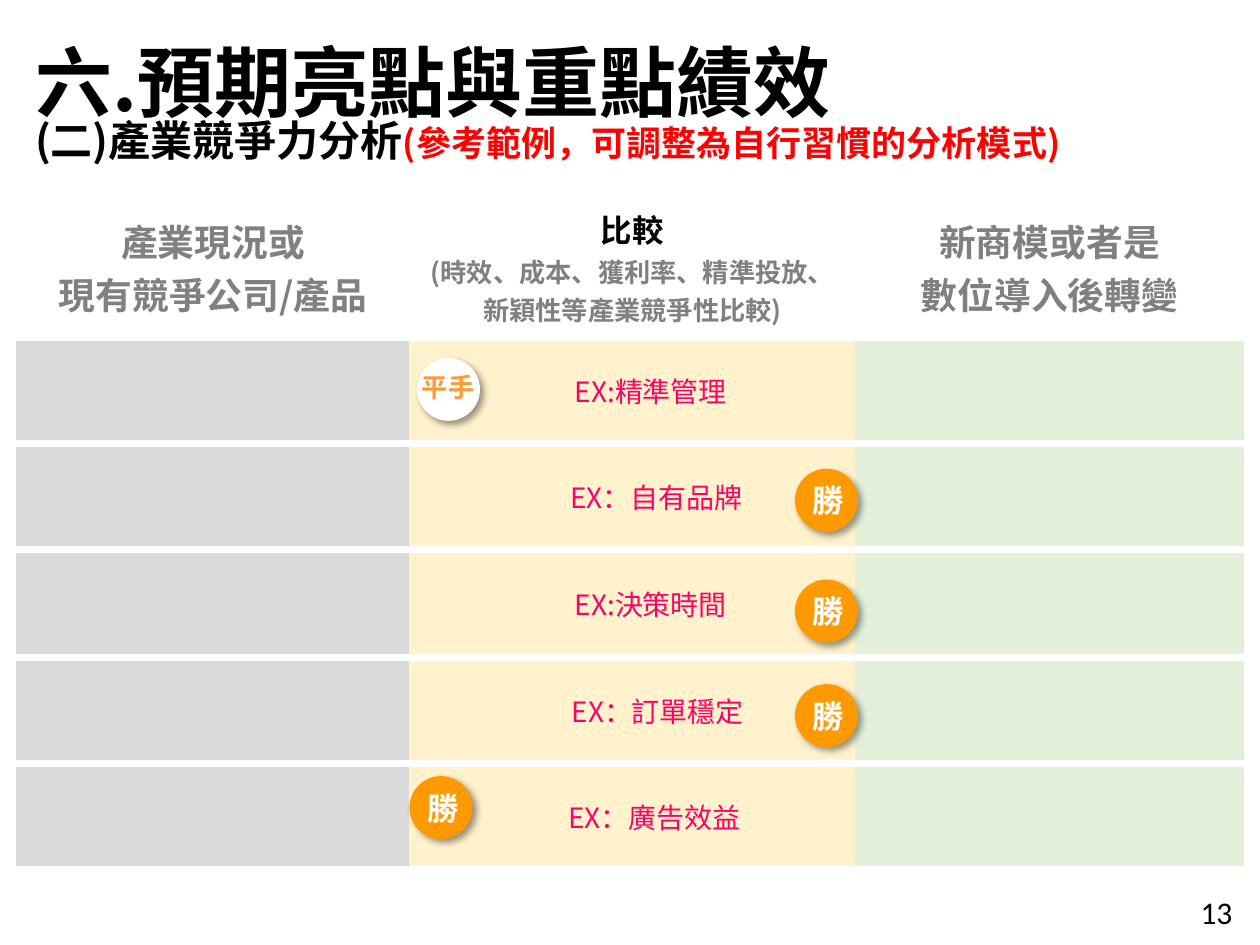
from copy import deepcopy
from dataclasses import dataclass

from lxml.etree import SubElement
from pptx import Presentation
from pptx.dml.color import RGBColor
from pptx.enum.shapes import MSO_SHAPE as Shape
from pptx.enum.text import MSO_ANCHOR as Anchor, PP_ALIGN as Align
from pptx.oxml import parse_xml
from pptx.oxml.ns import nsdecls, qn
from pptx.util import Inches, Pt

CJK = "Noto Sans CJK SC"
GREY, PINK, ORANGE = "808080", "FF0066", "FF9900"
WHITE, BLACK = "FFFFFF", "000000"


@dataclass
class Line:
    text: str
    size: float
    color: str
    bold: bool = True
    face: str = CJK


@dataclass
class Label:
    text: str
    indent: float


@dataclass
class Badge:
    left: float
    top: float


HEADS = [
    [Line("產業現況或", 21, GREY), Line("現有競爭公司/產品", 21, GREY)],
    [Line("比較", 18, BLACK),
     Line("(時效、成本、獲利率、精準投放、新穎性等產業競爭性比較)", 15, GREY)],
    [Line("新商模或者是", 21, GREY), Line("數位導入後轉變", 21, GREY)],
]
LABELS = [
    Label("EX:精準管理", 0.29),
    Label("EX：自有品牌", 0.38),
    Label("EX:決策時間", 0.29),
    Label("EX：訂單穩定", 0.4),
    Label("EX：廣告效益", 0.35),
]
FILLS = ["D9D9D9", "FFF2CC", "E2F0D9"]
WIDTHS = [3.12, 3.54, 3.08]
HEIGHTS = [1.12, 0.84, 0.84, 0.86, 0.84, 0.84]
WINS = [Badge(6.31, 4.6), Badge(6.31, 5.43), Badge(6.31, 3.72), Badge(3.25, 6.16)]


def rgb(code: str) -> RGBColor:
    return RGBColor.from_string(code)


def style(font, line: Line) -> None:
    font.size, font.bold, font.name = Pt(line.size), line.bold, line.face
    font.color.rgb = rgb(line.color)


def write(frame, lines: list[Line], align=Align.CENTER) -> None:
    for i, line in enumerate(lines):
        para = frame.add_paragraph() if i else frame.paragraphs[0]
        para.text, para.alignment = line.text, align
        style(para.font, line)


def add_text(shapes, box: tuple, lines: list[Line], wrap: bool = True):
    frame = shapes.add_textbox(*map(Inches, box)).text_frame
    frame.word_wrap = wrap
    write(frame, lines, Align.LEFT)
    return frame


def add_disc(shapes, badge: Badge, fill: str):
    """Add a round badge with a soft shadow to the lower right."""
    disc = shapes.add_shape(Shape.OVAL, Inches(badge.left), Inches(badge.top),
                            Inches(0.5), Inches(0.5))
    disc.fill.solid()
    disc.fill.fore_color.rgb = rgb(fill)
    disc.line.fill.background()
    disc.shadow.inherit = False
    effects = disc._element.spPr.find(qn("a:effectLst"))
    effects.append(parse_xml(
        f'<a:outerShdw {nsdecls("a")} blurRad="{Pt(4)}" dist="{Pt(3)}" '
        'dir="2700000" algn="tl" rotWithShape="0"><a:srgbClr val="000000">'
        '<a:alpha val="40000"/></a:srgbClr></a:outerShdw>'))
    return disc


def add_win(shapes, badge: Badge) -> None:
    frame = add_disc(shapes, badge, ORANGE).text_frame
    frame.margin_left = frame.margin_right = Inches(0.07)
    frame.margin_top = frame.margin_bottom = Inches(0.04)
    frame.vertical_anchor = Anchor.MIDDLE
    write(frame, [Line("勝", 18, WHITE)])


def add_tie(shapes, badge: Badge) -> None:
    group = shapes.add_group_shape().shapes
    add_disc(group, badge, WHITE)
    add_text(group, (badge.left - 0.06, badge.top + 0.06, 0.62, 0.35),
             [Line("平手", 15, "FF9933")], wrap=False)


def rule_cell(cell) -> None:
    """Draw white rules above and below a cell."""
    props = cell._tc.get_or_add_tcPr()
    for tag in ("lnB", "lnT"):
        props.insert(0, parse_xml(
            f'<a:{tag} {nsdecls("a")} w="{Pt(4.5)}"><a:solidFill>'
            f'<a:srgbClr val="{WHITE}"/></a:solidFill></a:{tag}>'))


def add_grid(shapes) -> None:
    table = shapes.add_table(
        len(HEIGHTS), len(WIDTHS), Inches(0.13), Inches(1.56),
        Inches(sum(WIDTHS)), Inches(sum(HEIGHTS))).table
    table.first_row = table.horz_banding = False
    plain = "{2D5ABB26-0587-4C30-8999-92F81FD0307C}"
    table._tbl.tblPr.find(qn("a:tableStyleId")).text = plain
    for col, width in zip(table.columns, WIDTHS):
        col.width = Inches(width)
    for row, height in zip(table.rows, HEIGHTS):
        row.height = Inches(height)
    for cell in table.iter_cells():
        cell.margin_left = cell.margin_right = Inches(0.07)
        cell.margin_top = cell.margin_bottom = Inches(0.04)
        cell.vertical_anchor = Anchor.MIDDLE
    for col, lines in enumerate(HEADS):
        cell = table.cell(0, col)
        cell.fill.background()
        write(cell.text_frame, lines)
    for row, label in enumerate(LABELS, 1):
        for col, fill in enumerate(FILLS):
            cell = table.cell(row, col)
            rule_cell(cell)
            cell.fill.solid()
            cell.fill.fore_color.rgb = rgb(fill)
        frame = table.cell(row, 1).text_frame
        write(frame, [Line(label.text, 16, PINK, bold=False)])
        props = frame.paragraphs[0]._p.get_or_add_pPr()
        props.set("marL", str(Inches(label.indent)))
        props.set("indent", "0")


def match_fonts(root) -> None:
    """Give East Asian text the same face as Latin text."""
    for latin in list(root.iter(qn("a:latin"))):
        east = deepcopy(latin)
        east.tag = qn("a:ea")
        latin.addnext(east)


def main() -> None:
    deck = Presentation()
    deck.slide_width, deck.slide_height = Inches(10), Inches(7.5)
    slide = deck.slides.add_slide(deck.slide_layouts[6])
    shapes = slide.shapes

    title = add_text(shapes, (0.18, -0.14, 8.06, 1.08),
                     [Line("六.預期亮點與重點績效", 44, BLACK)])
    title.paragraphs[0].line_spacing = 1.5
    para = add_text(shapes, (0.18, 0.86, 9.69, 0.5), []).paragraphs[0]
    for part in (Line("(二)產業競爭力分析", 24, BLACK),
                 Line("(參考範例，可調整為自行習慣的分析模式)", 20, "FF0000")):
        run = para.add_run()
        run.text = part.text
        style(run.font, part)

    add_grid(shapes)
    add_tie(shapes, Badge(3.31, 2.84))
    for badge in WINS:
        add_win(shapes, badge)
    add_text(shapes, (9.43, 7.04, 0.57, 0.4),
             [Line("13", 18, BLACK, bold=False, face="Calibri")])
    match_fonts(slide._element)
    deck.save("out.pptx")


if __name__ == "__main__":
    main()
